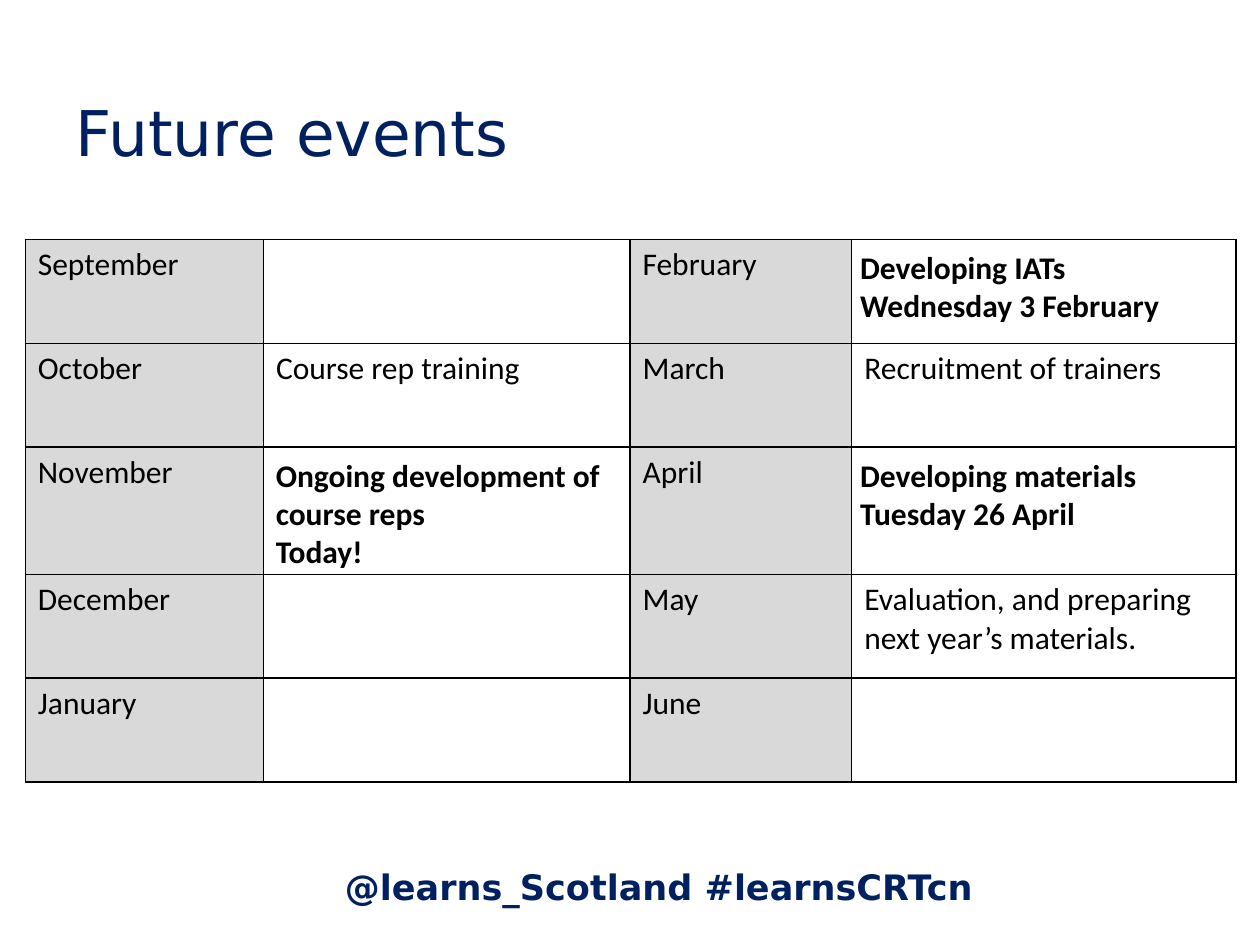
import pptx
import pptx.dml.color
import pptx.enum.text
import pptx.util
from lxml import etree
from pptx.oxml.ns import qn
from pptx.util import Cm

TITLE = "Future events"
FOOTER = "@learns_Scotland #learnsCRTcn"
EVENTS = [
    ("September", "", "February", ""),
    ("October", "Course rep training", "March", "Recruitment of trainers"),
    ("November", "", "April", ""),
    ("December", "", "May", "Evaluation, and preparing next year’s materials."),
    ("January", "", "June", ""),
]
HIGHLIGHTS = [
    # left, top, height, lines
    (5.31, 9.07, 2.57, ["Ongoing development of course reps", "Today!"]),
    (17.09, 4.88, 1.8, ["Developing IATs", "Wednesday 3 February"]),
    (17.09, 9.07, 1.8, ["Developing materials", "Tuesday 26 April"]),
]
HIGHLIGHT_WIDTH = 7.19

COLUMN_WIDTHS = [4.8, 7.39, 4.47, 7.75]
ROW_HEIGHTS = [2.09, 2.09, 2.57, 2.09, 2.09]
MONTH_COLUMNS = (0, 2)
MONTH_FILL = "D9D9D9"
BORDER_COLOUR = "000000"

TITLE_FORMAT = {"name": "DejaVu Sans", "size": 36, "bold": False, "colour": "002060"}
FOOTER_FORMAT = {**TITLE_FORMAT, "size": 20, "bold": True}
CELL_FORMAT = {"name": "Calibri", "size": 18, "bold": False, "colour": "000000"}
HIGHLIGHT_FORMAT = {**CELL_FORMAT, "bold": True}

ALIGN = pptx.enum.text.PP_ALIGN
ANCHOR = pptx.enum.text.MSO_ANCHOR


def rgb(colour):
    return pptx.dml.color.RGBColor.from_string(colour)


def write(text_frame, lines, text_format, alignment=ALIGN.LEFT):
    text_frame.word_wrap = True
    text_frame.text = "\n".join(lines)
    for paragraph in text_frame.paragraphs:
        paragraph.alignment = alignment
        for name, value in text_format.items():
            if name == "colour":
                paragraph.font.color.rgb = rgb(value)
            else:
                setattr(paragraph.font, name, pptx.util.Pt(value) if name == "size" else value)


def add_text(slide, box, lines, text_format, alignment=ALIGN.LEFT):
    shape = slide.shapes.add_textbox(*map(Cm, box))
    write(shape.text_frame, lines, text_format, alignment)


def add_borders(cell):
    properties = cell._tc.get_or_add_tcPr()
    for side in ("lnL", "lnR", "lnT", "lnB"):
        line = etree.SubElement(properties, qn(f"a:{side}"), w=str(pptx.util.Pt(1)))
        fill = etree.SubElement(line, qn("a:solidFill"))
        etree.SubElement(fill, qn("a:srgbClr"), val=BORDER_COLOUR)


def add_title(slide):
    title = slide.shapes.title
    title.left, title.top, title.width, title.height = map(Cm, (1.27, 0.76, 18.44, 3.76))
    title.text_frame.vertical_anchor = ANCHOR.MIDDLE
    write(title.text_frame, [TITLE], TITLE_FORMAT)


def add_events_table(slide):
    box = (0.51, 4.83, sum(COLUMN_WIDTHS), sum(ROW_HEIGHTS))
    table = slide.shapes.add_table(len(EVENTS), len(COLUMN_WIDTHS), *map(Cm, box)).table
    table.first_row = table.horz_banding = False
    for column, width in zip(table.columns, COLUMN_WIDTHS):
        column.width = Cm(width)
    for row, height, texts in zip(table.rows, ROW_HEIGHTS, EVENTS):
        row.height = Cm(height)
        for index, (cell, text) in enumerate(zip(row.cells, texts)):
            write(cell.text_frame, [text], CELL_FORMAT)
            add_borders(cell)
            if index in MONTH_COLUMNS:
                cell.fill.solid()
                cell.fill.fore_color.rgb = rgb(MONTH_FILL)
            else:
                cell.fill.background()


def main():
    presentation = pptx.Presentation()
    presentation.slide_width, presentation.slide_height = Cm(25.4), Cm(19.05)
    slide = presentation.slides.add_slide(presentation.slide_layouts.get_by_name("Title Only"))
    add_text(slide, (5.69, 17.32, 15.19, 1.12), [FOOTER], FOOTER_FORMAT, ALIGN.CENTER)
    add_title(slide)
    add_events_table(slide)
    for left, top, height, lines in HIGHLIGHTS:
        add_text(slide, (left, top, HIGHLIGHT_WIDTH, height), lines, HIGHLIGHT_FORMAT)
    presentation.save("out.pptx")


if __name__ == "__main__":
    main()
